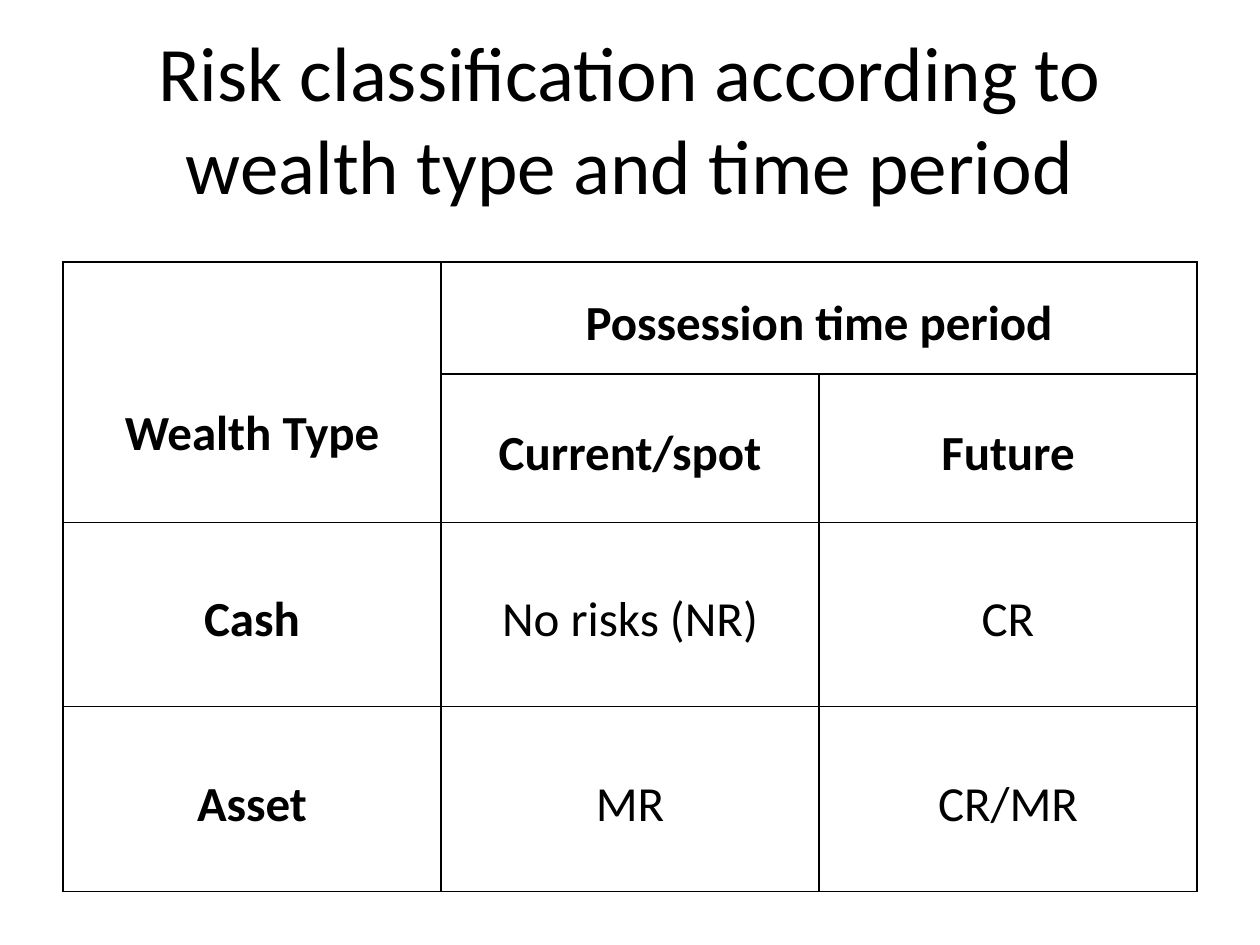
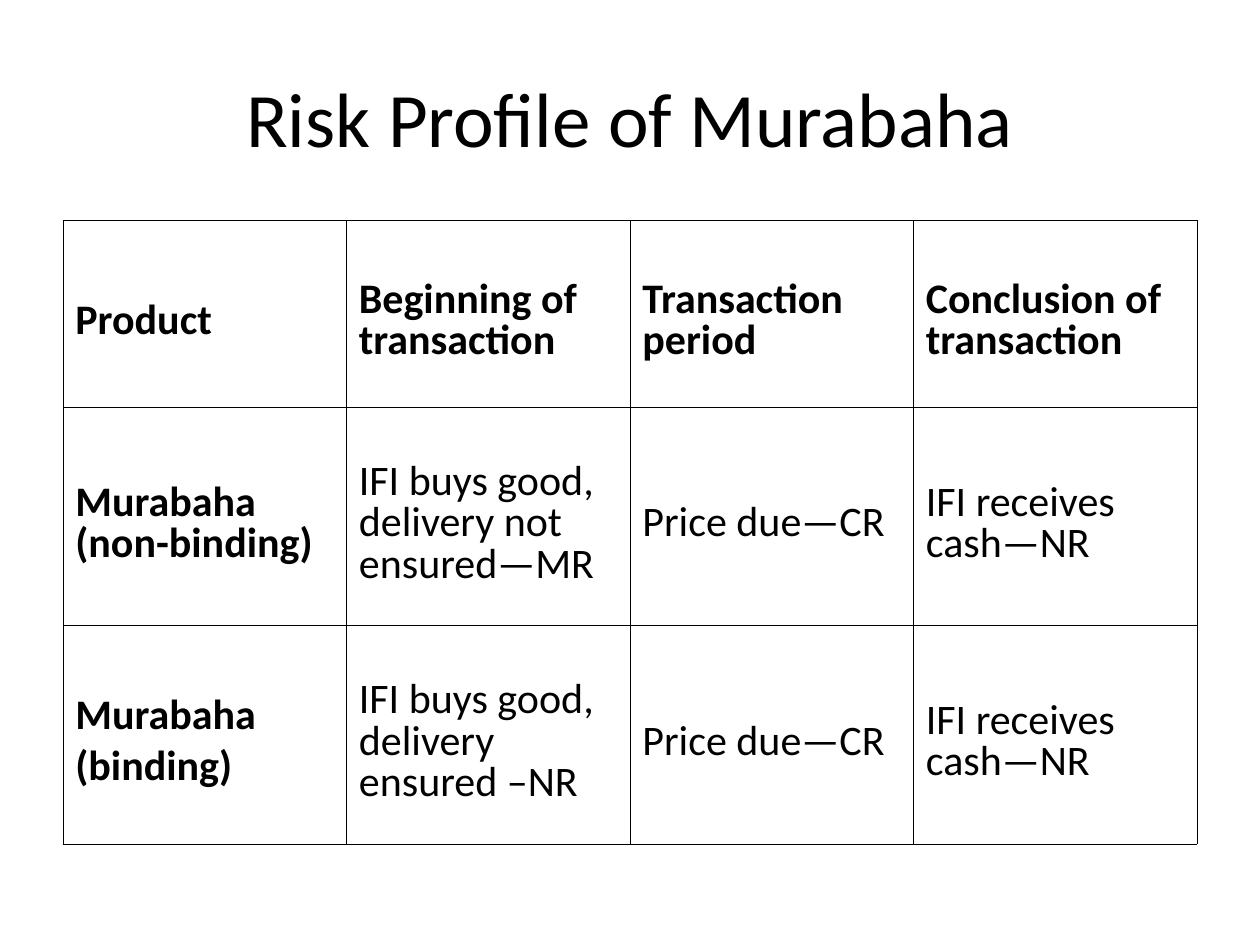
from lxml.etree import SubElement
from pptx import Presentation
from pptx.dml.color import RGBColor
from pptx.enum.text import MSO_ANCHOR, MSO_AUTO_SIZE, PP_ALIGN
from pptx.oxml.ns import qn
from pptx.util import Cm, Pt

COLORS = {"ink": "000000", "paper": "FFFFFF"}
FONT = "Calibri"
LEFT, WIDTH = 1.27, 22.86
TITLE_ONLY = 5


class Deck:
    """Holds the shared style and the slide being built."""

    def __init__(self):
        self.prs = Presentation()
        self.prs.slide_width, self.prs.slide_height = Cm(25.4), Cm(19.05)
        self.slide = None

    def format(self, paragraph, size, bold=False, align=PP_ALIGN.CENTER):
        paragraph.alignment = align
        font = paragraph.font
        font.name, font.size, font.bold = FONT, Pt(size), bold
        font.color.rgb = RGBColor.from_string(COLORS["ink"])

    def add_slide(self, heading, top, height):
        self.slide = self.prs.slides.add_slide(self.prs.slide_layouts[TITLE_ONLY])
        title = self.slide.shapes.title
        title.left, title.top = Cm(LEFT), Cm(top)
        title.width, title.height = Cm(WIDTH), Cm(height)
        frame = title.text_frame
        frame.text = heading
        frame.auto_size = MSO_AUTO_SIZE.NONE
        frame.vertical_anchor = MSO_ANCHOR.MIDDLE
        self.format(frame.paragraphs[0], 44)

    def add_grid(self, rows, top, heights, header_rows, size, align, space, inner, outer):
        """Ruled table: header rows and first column bold, None left empty."""
        n_rows, n_cols = len(rows), len(rows[0])
        table = self.slide.shapes.add_table(
            n_rows, n_cols, Cm(LEFT), Cm(top), Cm(WIDTH), Cm(sum(heights))).table
        table.first_row = table.horz_banding = False
        for column in table.columns:
            column.width = Cm(WIDTH / n_cols)
        for r, texts in enumerate(rows):
            table.rows[r].height = Cm(heights[r])
            for c, text in enumerate(texts):
                cell = table.cell(r, c)
                edges = {"L": c == 0, "R": c == n_cols - 1,
                         "T": r == 0, "B": r == n_rows - 1}
                for side, is_outer in edges.items():
                    self.rule(cell, side, outer if is_outer else inner)
                cell.fill.solid()
                cell.fill.fore_color.rgb = RGBColor.from_string(COLORS["paper"])
                cell.vertical_anchor = MSO_ANCHOR.MIDDLE
                cell.margin_left = cell.margin_right = Cm(0.25)
                cell.margin_top, cell.margin_bottom = Cm(0.45), Cm(0.13)
                if text is None:
                    continue
                cell.text = text
                for i, paragraph in enumerate(cell.text_frame.paragraphs):
                    paragraph.line_spacing = 0.81
                    if i:
                        paragraph.space_before = Pt(space)
                    self.format(paragraph, size, r < header_rows or c == 0, align)
        return table

    def rule(self, cell, side, width):
        line = SubElement(cell._tc.get_or_add_tcPr(), qn(f"a:ln{side}"), w=str(Pt(width)))
        fill = SubElement(line, qn("a:solidFill"))
        SubElement(fill, qn("a:srgbClr"), val=COLORS["ink"])


def main():
    deck = Deck()

    # Risk classification
    deck.add_slide("Risk classification according to wealth type and time period",
                   top=0.53, height=3.66)
    classification = deck.add_grid(
        [["Wealth Type", "Possession time period", None],
         [None, "Current/spot", "Future"],
         ["Cash", "No risks (NR)", "CR"],
         ["Asset", "MR", "CR/MR"]],
        top=5.28, heights=[2.26, 2.87, 3.71, 3.73], header_rows=2,
        size=28, align=PP_ALIGN.CENTER, space=7, inner=1, outer=1)
    wealth_type = classification.cell(0, 0)
    wealth_type.merge(classification.cell(1, 0))
    wealth_type.margin_top = Cm(1.88)
    classification.cell(0, 1).merge(classification.cell(0, 2))

    # Murabaha risk profile
    deck.add_slide("Risk Profile of Murabaha", top=0.36, height=3.99)
    deck.add_grid(
        [["Product", "Beginning of transaction", "Transaction period",
          "Conclusion of transaction"],
         ["Murabaha (non-binding)", "IFI buys good, delivery not ensured—MR",
          "Price due—CR", "IFI receives cash—NR"],
         ["Murabaha\n(binding)", "IFI buys good, delivery ensured –NR",
          "Price due—CR", "IFI receives cash—NR"]],
        top=4.44, heights=[3.77, 4.4, 4.4], header_rows=1,
        size=24, align=PP_ALIGN.LEFT, space=5, inner=0.11, outer=0.23)

    deck.prs.save("out.pptx")


if __name__ == "__main__":
    main()
